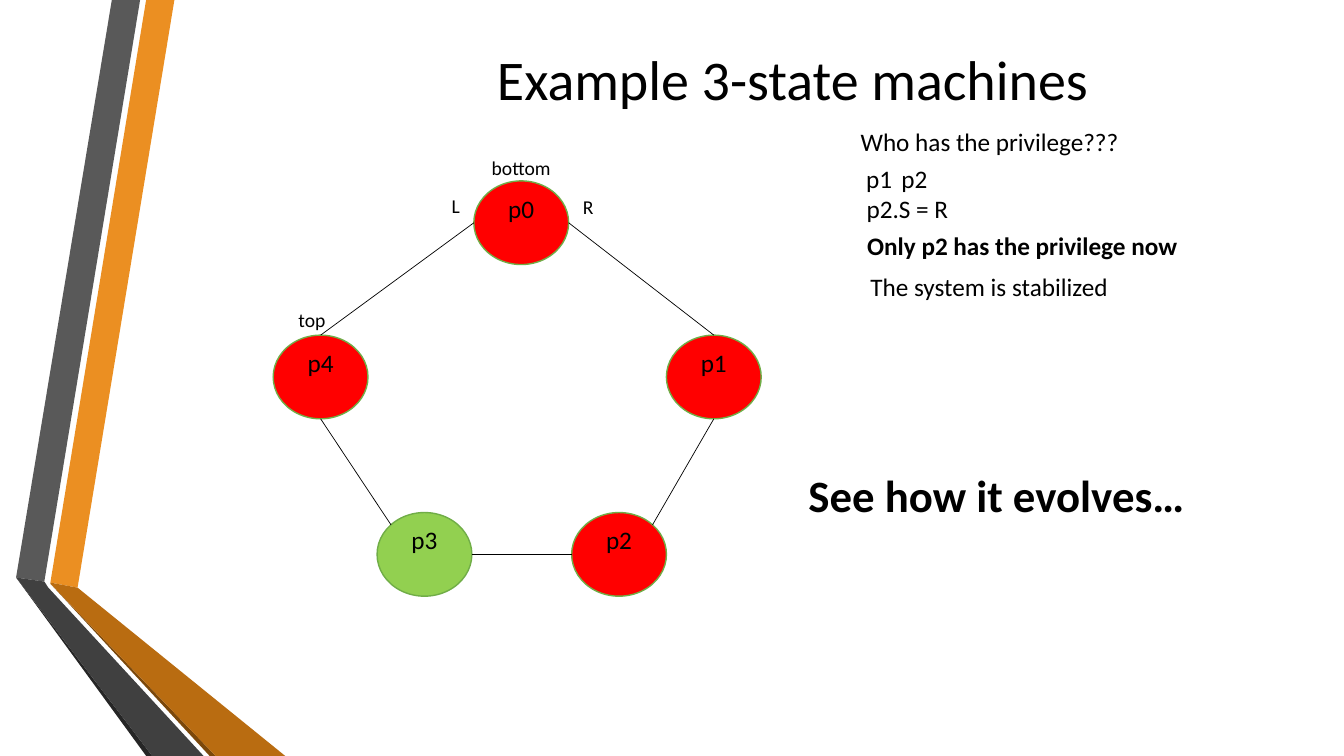
from dataclasses import dataclass
from math import cos, radians, sin

from lxml.etree import SubElement
from pptx import Presentation
from pptx.dml.color import RGBColor
from pptx.enum.shapes import MSO_CONNECTOR as Connector, MSO_SHAPE as Preset
from pptx.enum.text import MSO_ANCHOR as Anchor, MSO_AUTO_SIZE as AutoSize, PP_ALIGN as Align
from pptx.oxml.ns import qn
from pptx.util import Inches, Pt


@dataclass(frozen=True)
class Theme:
    font: str = "Calibri"
    ink: str = "000000"
    active: str = "FF0000"
    idle: str = "92D050"
    rim: str = "70AD47"
    title: int = 40
    callout: int = 32
    body: int = 18
    label: int = 14


THEME = Theme()
MACHINE_WIDTH, MACHINE_HEIGHT = 0.94, 0.83

BANDS = [
    ("EB8F22", [(0.5, 5.78), (0.77, 5.83), (1.73, 0), (1.45, 0)]),
    ("595959", [(1.39, 0), (1.11, 0), (0.16, 5.73), (0.44, 5.77)]),
    ("262626", [(0.16, 5.73), (1.45, 7.5), (1.51, 7.5)]),
    ("7B480B", [(0.5, 5.79), (2.08, 7.5), (2.14, 7.5)]),
    ("B96C11", [(0.5, 5.79), (2.14, 7.5), (2.83, 7.5), (0.77, 5.83), (0.5, 5.78)]),
    ("404040", [(2.02, 7.5), (0.48, 5.83), (0.44, 5.77), (0.16, 5.73), (1.51, 7.5)]),
]

MACHINES = {
    "p0": (5.17, 2.21, THEME.active),
    "p1": (7.08, 3.74, THEME.active),
    "p2": (6.14, 5.5, THEME.active),
    "p3": (4.21, 5.5, THEME.idle),
    "p4": (3.18, 3.74, THEME.active),
}

LINKS = [
    ("p4", 270, "p0", 180),
    ("p0", 0, "p1", 270),
    ("p4", 90, "p3", 225),
    ("p1", 90, "p2", 315),
    ("p3", 0, "p2", 180),
]

TEXTS = [
    ("bottom", 4.77, 1.5, 0.8, 0.34, THEME.label, False),
    ("top", 2.86, 3.01, 0.47, 0.34, THEME.label, False),
    ("L", 4.38, 1.87, 0.28, 0.34, THEME.label, False),
    ("R", 5.68, 1.88, 0.31, 0.34, THEME.label, False),
    ("Who has the privilege???", 8.42, 1.2, 2.79, 0.4, THEME.body, False),
    ("p1", 8.49, 1.57, 0.46, 0.4, THEME.body, False),
    ("p2", 8.84, 1.57, 0.46, 0.4, THEME.body, False),
    ("p2.S = R", 8.49, 1.87, 1.02, 0.4, THEME.body, False),
    ("Only p2 has the privilege now", 8.49, 2.24, 3.3, 0.4, THEME.body, True),
    ("The system is stabilized", 8.18, 2.64, 3.26, 0.4, THEME.body, False),
    ("See how it evolves…", 7.75, 4.59, 4.27, 0.64, THEME.callout, True),
]


def apply_format(target, values):
    for name, value in values.items():
        setattr(target, name, value)


def write_text(shape, text, size, frame_format, bold=False):
    frame = shape.text_frame
    apply_format(frame, frame_format)
    paragraph = frame.paragraphs[0]
    paragraph.text = text
    paragraph.alignment = Align.CENTER
    apply_format(paragraph.font, {"name": THEME.font, "size": Pt(size), "bold": bold})
    paragraph.font.color.rgb = RGBColor.from_string(THEME.ink)


def paint(shape, fill, line=None):
    shape.shadow.inherit = False
    shape.fill.solid()
    shape.fill.fore_color.rgb = RGBColor.from_string(fill)
    if line:
        shape.line.color.rgb = RGBColor.from_string(line)
        shape.line.width = Pt(1)
    else:
        shape.line.fill.background()


def add_band(slide, color, points):
    corners = [(Inches(x), Inches(y)) for x, y in points]
    builder = slide.shapes.build_freeform(*corners[0])
    builder.add_line_segments(corners[1:], close=True)
    paint(builder.convert_to_shape(), color)


def add_title(slide, text):
    title = slide.shapes.title
    apply_format(title, {"left": Inches(2.38), "top": Inches(0.21),
                         "width": Inches(10.96), "height": Inches(1.13)})
    write_text(title, text, THEME.title, {"vertical_anchor": Anchor.MIDDLE, "word_wrap": True})


def add_machine(slide, name, x, y, color):
    machine = slide.shapes.add_shape(
        Preset.OVAL, Inches(x - MACHINE_WIDTH / 2), Inches(y - MACHINE_HEIGHT / 2),
        Inches(MACHINE_WIDTH), Inches(MACHINE_HEIGHT))
    paint(machine, color, THEME.rim)
    write_text(machine, name, THEME.body, {
        "vertical_anchor": Anchor.TOP, "margin_top": 0, "margin_bottom": 0, "word_wrap": True})


def rim_point(name, degrees):
    x, y, _ = MACHINES[name]
    angle = radians(degrees)
    return (Inches(x + MACHINE_WIDTH / 2 * cos(angle)),
            Inches(y + MACHINE_HEIGHT / 2 * sin(angle)))


def add_link(slide, start, start_angle, end, end_angle):
    link = slide.shapes.add_connector(
        Connector.STRAIGHT, *rim_point(start, start_angle), *rim_point(end, end_angle))
    link.line.color.rgb = RGBColor.from_string(THEME.ink)
    link.line.width = Pt(0.5)
    SubElement(link._element.spPr, qn("a:effectLst"))


def add_text(slide, text, left, top, width, height, size, bold):
    box = slide.shapes.add_textbox(Inches(left), Inches(top), Inches(width), Inches(height))
    write_text(box, text, size,
               {"word_wrap": False, "auto_size": AutoSize.SHAPE_TO_FIT_TEXT}, bold)


def main():
    presentation = Presentation()
    apply_format(presentation, {"slide_width": Inches(13.33), "slide_height": Inches(7.5)})
    slide = presentation.slides.add_slide(presentation.slide_layouts[5])
    for band in BANDS:
        add_band(slide, *band)
    add_title(slide, "Example 3-state machines")
    for name, machine in MACHINES.items():
        add_machine(slide, name, *machine)
    for link in LINKS:
        add_link(slide, *link)
    for text in TEXTS:
        add_text(slide, *text)
    presentation.save("out.pptx")


if __name__ == "__main__":
    main()
